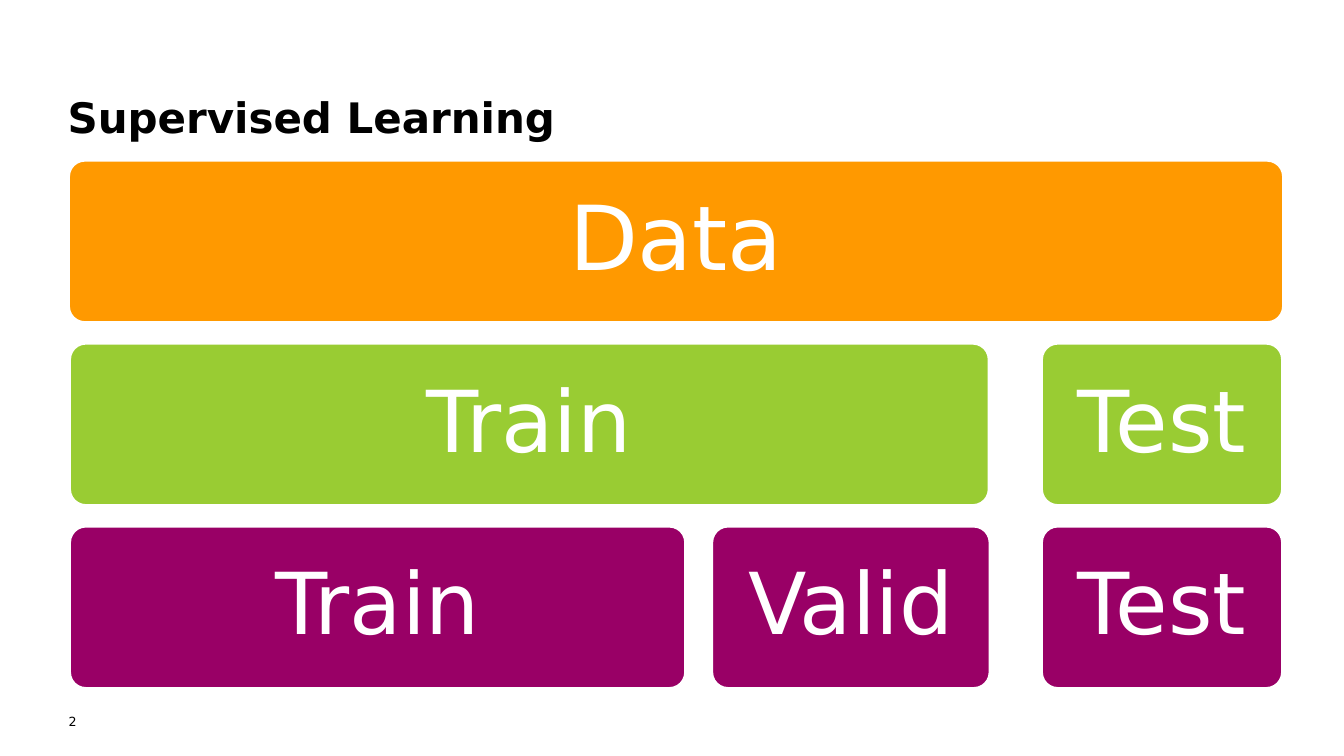
import pptx
import pptx.util
import pptx.dml.color
import pptx.enum.shapes
import pptx.enum.text

Inches = pptx.util.Inches
Pt = pptx.util.Pt
ALIGN = pptx.enum.text.PP_ALIGN
ANCHOR = pptx.enum.text.MSO_ANCHOR


def colour(value):
    return pptx.dml.color.RGBColor.from_string(value)


def write(shape, text, size, ink, align, anchor, inset=0, bold=False):
    frame = shape.text_frame
    frame.word_wrap = True
    frame.auto_size = pptx.enum.text.MSO_AUTO_SIZE.NONE
    frame.vertical_anchor = anchor
    frame.margin_left = frame.margin_right = Inches(inset)
    frame.margin_top = frame.margin_bottom = Inches(inset)
    para = frame.paragraphs[0]
    para.alignment = align
    span = para.add_run()
    span.text = text
    span.font.name = "DejaVu Sans"
    span.font.size = Pt(size)
    span.font.bold = bold
    span.font.color.rgb = colour(ink)
    return para


deck = pptx.Presentation()
deck.slide_width = Inches(13.33)
deck.slide_height = Inches(7.5)
page = deck.slides.add_slide(deck.slide_layouts[5])

# Title
title = page.shapes.title
title.left, title.top = Inches(0.67), Inches(0.16)
title.width, title.height = Inches(11.55), Inches(1.25)
write(title, "Supervised Learning", 30, "000000", ALIGN.LEFT, ANCHOR.BOTTOM, bold=True)

# Rows of data splits: fill, text size, inset, boxes as (label, left, width)
rows = [
    ("FF9900", 64, 0.27, [("Data", 0.68, 12.05)]),
    ("99CC33", 61, 0.25, [("Train", 0.69, 9.12), ("Test", 10.33, 2.39)]),
    ("990066", 61, 0.25, [("Train", 0.69, 6.11), ("Valid", 7.06, 2.76), ("Test", 10.33, 2.39)]),
]
first_top, row_step, box_height = 1.59, 1.815, 1.61

for row, (fill, size, inset, boxes) in enumerate(rows):
    for label, left, width in boxes:
        box = page.shapes.add_shape(
            pptx.enum.shapes.MSO_SHAPE.ROUNDED_RECTANGLE,
            Inches(left), Inches(first_top + row * row_step),
            Inches(width), Inches(box_height))
        box.adjustments[0] = 0.1
        box.shadow.inherit = False
        box.fill.solid()
        box.fill.fore_color.rgb = colour(fill)
        box.line.color.rgb = colour("FFFFFF")
        box.line.width = Pt(2)
        para = write(box, label, size, "FFFFFF", ALIGN.CENTER, ANCHOR.MIDDLE, inset)
        para.line_spacing = 0.9

# Page number
number = page.shapes.add_textbox(Inches(0.68), Inches(7.08), Inches(0.65), Inches(0.33))
write(number, "2", 9, "000000", ALIGN.LEFT, ANCHOR.TOP)

deck.save("out.pptx")
